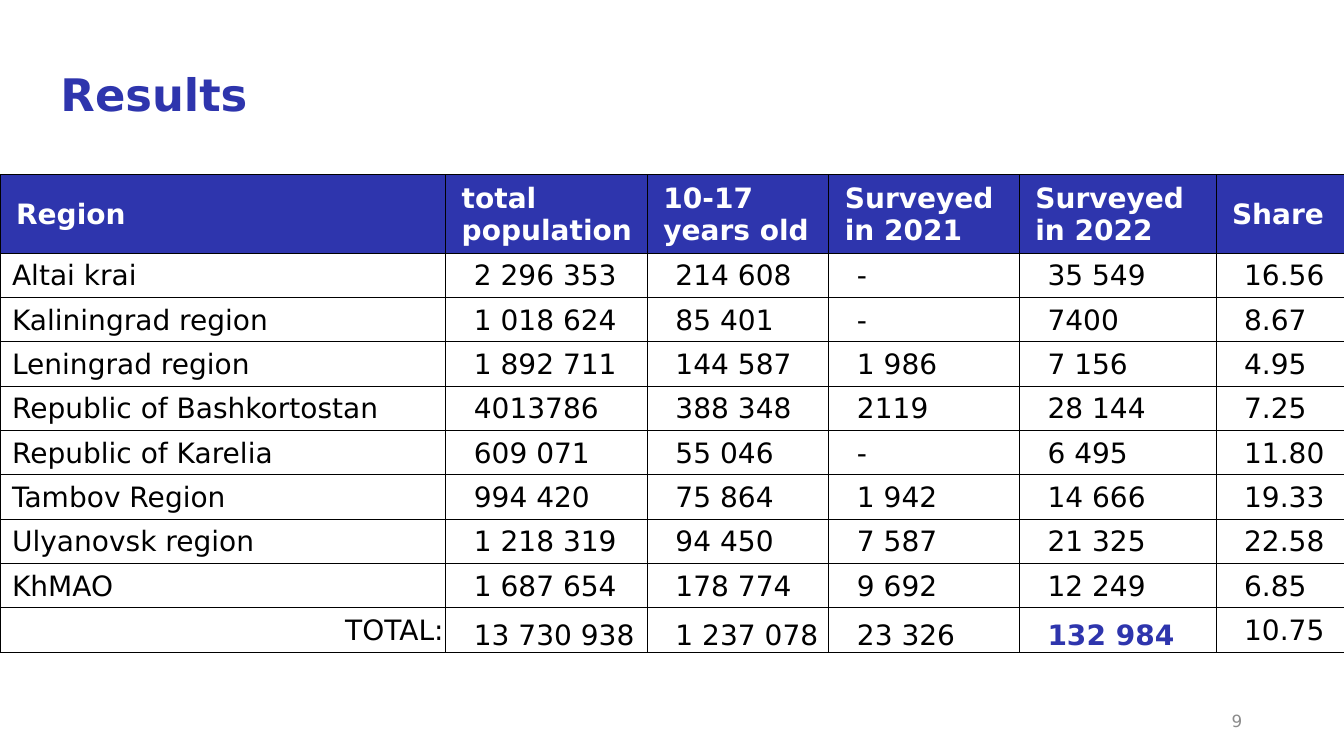
from dataclasses import dataclass

from lxml.etree import SubElement
from pptx import Presentation
from pptx.dml.color import RGBColor
from pptx.enum.text import MSO_ANCHOR, PP_ALIGN
from pptx.oxml.ns import qn
from pptx.slide import Slide
from pptx.table import _Cell
from pptx.text.text import TextFrame
from pptx.util import Inches, Pt

FONT = "DejaVu Sans"
COLORS = {
    "accent": "2E35AD",
    "header_text": "FFFFFF",
    "text": "000000",
    "border": "000000",
    "page_number": "8C8C8C",
}

COLUMN_WIDTHS = [4.42, 2, 1.8, 1.89, 1.95, 1.28]
HEADER_HEIGHT = 0.78
ROW_HEIGHT = 0.44
SURVEYED_2022 = 4
SHARE = 5

HEADERS = ["Region", "total population", "10-17 years old",
           "Surveyed in 2021", "Surveyed in 2022", "Share"]
REGIONS = [
    ["Altai krai", "2 296 353", "214 608", "-", "35 549", "16.56"],
    ["Kaliningrad region", "1 018 624", "85 401", "-", "7400", "8.67"],
    ["Leningrad region", "1 892 711", "144 587", "1 986", "7 156", "4.95"],
    ["Republic of Bashkortostan", "4013786", "388 348", "2119", "28 144", "7.25"],
    ["Republic of Karelia", "609 071", "55 046", "-", "6 495", "11.80"],
    ["Tambov Region", "994 420", "75 864", "1 942", "14 666", "19.33"],
    ["Ulyanovsk region", "1 218 319", "94 450", "7 587", "21 325", "22.58"],
    ["KhMAO", "1 687 654", "178 774", "9 692", "12 249", "6.85"],
]
TOTALS = ["TOTAL:", "13 730 938", "1 237 078", "23 326", "132 984", "10.75"]


@dataclass(frozen=True)
class TextStyle:
    size: int
    color: str
    bold: bool = False
    align: PP_ALIGN = PP_ALIGN.LEFT


@dataclass(frozen=True)
class CellStyle:
    text: TextStyle
    left_margin: float
    margin: float = 0.02
    anchor: MSO_ANCHOR = MSO_ANCHOR.MIDDLE
    fill: str | None = None


TITLE = TextStyle(32, "accent", bold=True)
PAGE_NUMBER = TextStyle(12, "page_number", align=PP_ALIGN.RIGHT)
BODY = TextStyle(20, "text")

HEADER_CELL = CellStyle(TextStyle(20, "header_text", bold=True), 0.16, fill="accent")
REGION_CELL = CellStyle(BODY, 0.12)
VALUE_CELL = CellStyle(BODY, 0.28)
TOTAL_LABEL_CELL = CellStyle(TextStyle(20, "text", align=PP_ALIGN.RIGHT), 0.12)
TOTAL_CELL = CellStyle(BODY, 0.28, 0.01, MSO_ANCHOR.BOTTOM)
GRAND_TOTAL_CELL = CellStyle(TextStyle(20, "accent", bold=True), 0.28, 0.01,
                             MSO_ANCHOR.BOTTOM)


def rgb(name: str) -> RGBColor:
    return RGBColor.from_string(COLORS[name])


def write_text(text_frame: TextFrame, text: str, style: TextStyle) -> None:
    text_frame.text = text
    text_frame.word_wrap = True
    paragraph = text_frame.paragraphs[0]
    paragraph.alignment = style.align
    font = paragraph.runs[0].font
    font.name = FONT
    font.size = Pt(style.size)
    font.bold = style.bold
    font.color.rgb = rgb(style.color)


def add_borders(cell: _Cell) -> None:
    properties = cell._tc.get_or_add_tcPr()
    for side in ("a:lnL", "a:lnR", "a:lnT", "a:lnB"):
        line = SubElement(properties, qn(side), w=str(Pt(0.5)))
        fill = SubElement(line, qn("a:solidFill"))
        SubElement(fill, qn("a:srgbClr"), val=COLORS["border"])


def write_cell(cell: _Cell, text: str, style: CellStyle) -> None:
    write_text(cell.text_frame, text, style.text)
    cell.vertical_anchor = style.anchor
    cell.margin_left = Inches(style.left_margin)
    cell.margin_right = cell.margin_top = Inches(style.margin)
    cell.margin_bottom = 0
    add_borders(cell)
    if style.fill:
        cell.fill.solid()
        cell.fill.fore_color.rgb = rgb(style.fill)
    else:
        cell.fill.background()


def cell_style(row: int, column: int) -> CellStyle:
    if row == 0:
        return HEADER_CELL
    is_total = row > len(REGIONS)
    if column == 0:
        return TOTAL_LABEL_CELL if is_total else REGION_CELL
    if not is_total or column == SHARE:
        return VALUE_CELL
    return GRAND_TOTAL_CELL if column == SURVEYED_2022 else TOTAL_CELL


def add_title(slide: Slide) -> None:
    title = slide.shapes.title
    title.left, title.top = Inches(0.5), Inches(0.61)
    title.width, title.height = Inches(7.78), Inches(0.64)
    write_text(title.text_frame, "Results", TITLE)
    title.text_frame.vertical_anchor = MSO_ANCHOR.TOP


def add_results_table(slide: Slide) -> None:
    rows = [HEADERS, *REGIONS, TOTALS]
    frame = slide.shapes.add_table(
        len(rows), len(HEADERS), 0, Inches(1.73), Inches(sum(COLUMN_WIDTHS)),
        Inches(HEADER_HEIGHT + ROW_HEIGHT * (len(rows) - 1)))
    table = frame.table
    table.first_row = table.horz_banding = False
    for column, width in zip(table.columns, COLUMN_WIDTHS):
        column.width = Inches(width)
    for row_index, values in enumerate(rows):
        height = ROW_HEIGHT if row_index else HEADER_HEIGHT
        table.rows[row_index].height = Inches(height)
        for column_index, value in enumerate(values):
            write_cell(table.cell(row_index, column_index), value,
                       cell_style(row_index, column_index))


def add_page_number(slide: Slide) -> None:
    box = slide.shapes.add_textbox(Inches(9.42), Inches(6.95), Inches(3), Inches(0.4))
    write_text(box.text_frame, "9", PAGE_NUMBER)
    box.text_frame.vertical_anchor = MSO_ANCHOR.MIDDLE


def main() -> None:
    presentation = Presentation()
    presentation.slide_width = Inches(13.33)
    presentation.slide_height = Inches(7.5)
    slide = presentation.slides.add_slide(presentation.slide_layouts[5])
    add_title(slide)
    add_page_number(slide)
    add_results_table(slide)
    presentation.save("out.pptx")


if __name__ == "__main__":
    main()
